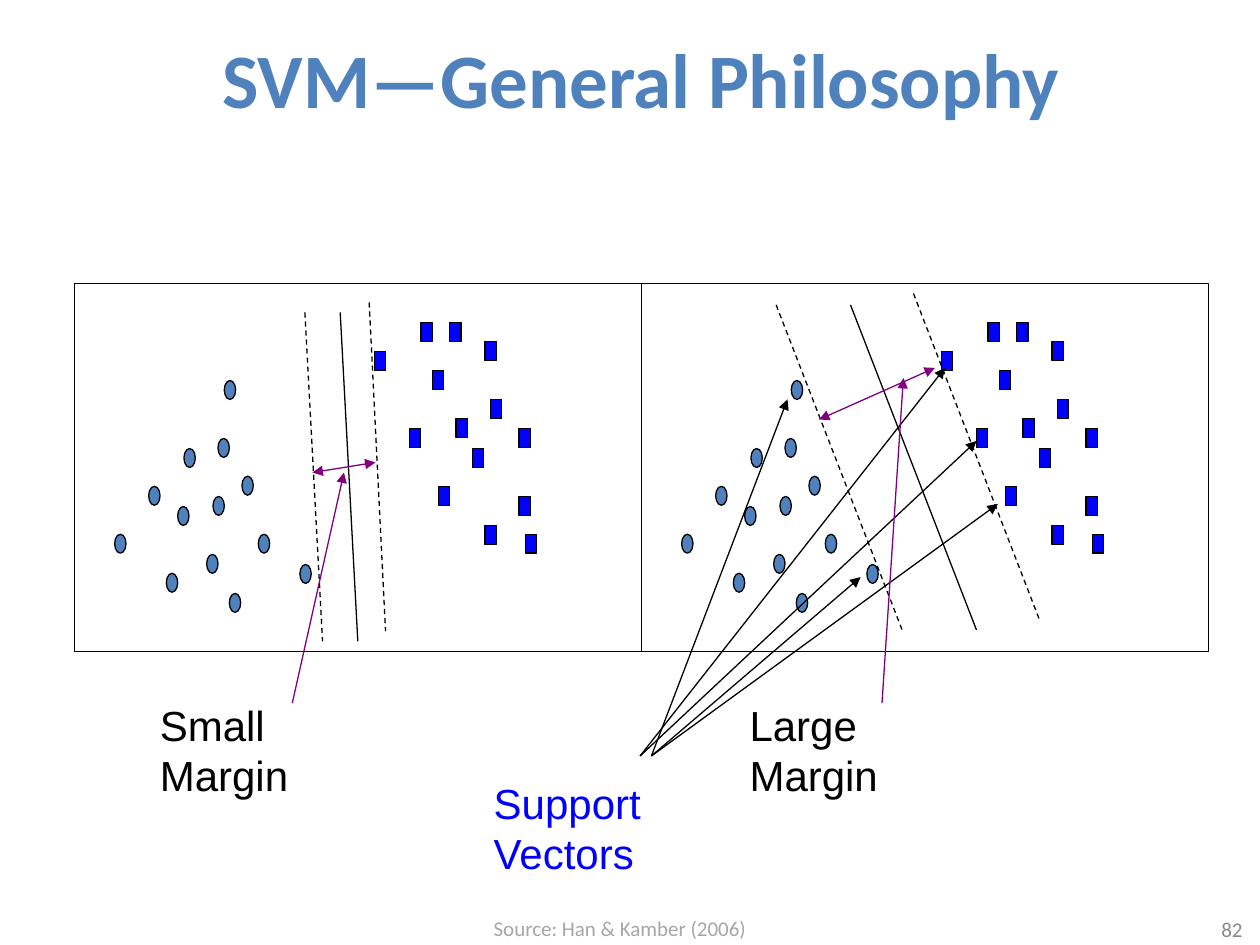
from lxml.etree import SubElement
from pptx import Presentation
from pptx.dml.color import RGBColor
from pptx.enum.dml import MSO_LINE_DASH_STYLE as Dash
from pptx.enum.shapes import MSO_CONNECTOR as Connector, MSO_SHAPE as Shape
from pptx.enum.text import MSO_ANCHOR as Anchor, PP_ALIGN as Align
from pptx.oxml.ns import qn
from pptx.util import Inches, Pt

STEEL = RGBColor(0x4F, 0x81, 0xBD)
BLUE = RGBColor(0x00, 0x00, 0xFF)
BLACK = RGBColor(0x00, 0x00, 0x00)
PURPLE = RGBColor(0x80, 0x00, 0x80)
GRAY = RGBColor(0x89, 0x89, 0x89)
LIGHT_GRAY = RGBColor(0xA6, 0xA6, 0xA6)

PANEL_LEFT, PANEL_TOP, PANEL_WIDTH, PANEL_HEIGHT = 0.59, 2.25, 4.5, 2.92
MARK_WIDTH, MARK_HEIGHT = 0.09, 0.15

CIRCLES = [
    (1.32, 4.55), (1.41, 4.02), (0.91, 4.24), (1.18, 3.86), (1.64, 4.4),
    (1.46, 3.56), (1.69, 3.94), (1.73, 3.48), (1.92, 3.78), (2.05, 4.24),
    (1.82, 4.71), (2.38, 4.48), (1.78, 3.02),
]
SQUARES = [
    (3.25, 3.4), (2.97, 2.79), (3.34, 2.56), (3.48, 3.86), (3.43, 2.94),
    (3.62, 3.32), (3.57, 2.56), (3.85, 2.71), (3.75, 3.56), (3.89, 3.17),
    (3.85, 4.17), (4.12, 3.4), (4.12, 3.94), (4.17, 4.24),
]
SMALL_MARGIN_LINES = [
    ((2.93, 2.4), (3.06, 5.01), True),
    ((2.42, 2.48), (2.56, 5.09), True),
    ((2.7, 2.48), (2.84, 5.09), False),
]
LARGE_MARGIN_LINES = [
    ((6.16, 2.42), (7.16, 5), True),
    ((7.25, 2.33), (8.25, 4.92), True),
    ((6.75, 2.42), (7.75, 5), False),
]
SUPPORT_ARROWS = [
    ((5.08, 6), (7.5, 2.92)),
    ((5.08, 6), (7.75, 3.5)),
    ((5.17, 6), (7.92, 4)),
    ((5.17, 6), (6.83, 4.58)),
    ((5.17, 6), (6.25, 3.17)),
]


def add_text(shapes, text, area, size, color, font="Arial",
             align=Align.LEFT, anchor=Anchor.TOP, bold=False):
    box = shapes.add_textbox(*map(Inches, area))
    frame = box.text_frame
    frame.word_wrap = True
    frame.vertical_anchor = anchor
    frame.text = text
    para = frame.paragraphs[0]
    para.alignment = align
    span = para.runs[0].font
    span.name, span.size, span.bold = font, Pt(size), bold
    span.color.rgb = color


def add_outlined(shapes, kind, area, fill=None):
    shape = shapes.add_shape(kind, *map(Inches, area))
    shape.shadow.inherit = False
    if fill is None:
        shape.fill.background()
    else:
        shape.fill.solid()
        shape.fill.fore_color.rgb = fill
    shape.line.color.rgb = BLACK
    shape.line.width = Pt(0.75)


def add_line(shapes, start, end, color=BLACK, dashed=False, arrows=()):
    line = shapes.add_connector(Connector.STRAIGHT, *map(Inches, start + end))
    line.line.color.rgb = color
    line.line.width = Pt(0.75)
    if dashed:
        line.line.dash_style = Dash.DASH
    for name in arrows:
        SubElement(line.line._get_or_add_ln(), qn(f"a:{name}"), type="triangle")
    SubElement(line._element.spPr, qn("a:effectLst"))


def add_panel(page, offset, boundaries):
    shapes = page.shapes.add_group_shape().shapes
    for kind, color, points in ((Shape.OVAL, STEEL, CIRCLES),
                                (Shape.RECTANGLE, BLUE, SQUARES)):
        for left, top in points:
            area = (left + offset, top, MARK_WIDTH, MARK_HEIGHT)
            add_outlined(shapes, kind, area, color)
    add_outlined(shapes, Shape.RECTANGLE,
                 (PANEL_LEFT + offset, PANEL_TOP, PANEL_WIDTH, PANEL_HEIGHT))
    for start, end, dashed in boundaries:
        add_line(shapes, start, end, dashed=dashed)


def add_support_vectors(page):
    shapes = page.shapes.add_group_shape().shapes
    add_text(shapes, "Support Vectors", (3.82, 6.12, 2.55, 0.5), 24, BLUE)
    for start, end in SUPPORT_ARROWS:
        add_line(shapes, start, end, arrows=("tailEnd",))


def add_margin(page, text, area, span, pointer):
    shapes = page.shapes.add_group_shape().shapes
    add_text(shapes, text, area, 24, BLACK)
    add_line(shapes, *span, color=PURPLE, arrows=("headEnd", "tailEnd"))
    add_line(shapes, *pointer, color=PURPLE, arrows=("tailEnd",))


def main():
    deck = Presentation()
    deck.slide_width, deck.slide_height = Inches(10), Inches(7.5)
    page = deck.slides.add_slide(deck.slide_layouts[6])

    add_text(page.shapes, "SVM—General Philosophy", (0.38, 0.28, 9.42, 0.67), 44,
             STEEL, "Calibri", Align.CENTER, Anchor.MIDDLE, bold=True)
    add_panel(page, 0, SMALL_MARGIN_LINES)
    add_panel(page, PANEL_WIDTH, LARGE_MARGIN_LINES)
    add_support_vectors(page)
    add_margin(page, "Small Margin", (1.17, 5.5, 2.1, 0.5),
               ((2.48, 3.75), (2.98, 3.67)), ((2.32, 5.58), (2.73, 3.75)))
    add_margin(page, "Large Margin", (5.85, 5.5, 2.12, 0.5),
               ((6.5, 3.33), (7.42, 2.92)), ((7, 5.58), (7.17, 3)))
    add_text(page.shapes, "82", (9.25, 7.22, 0.71, 0.31), 12,
             GRAY, "Calibri", Align.RIGHT, Anchor.MIDDLE)
    add_text(page.shapes, "Source: Han & Kamber (2006)", (3.66, 7.22, 2.52, 0.3), 12,
             LIGHT_GRAY, "Calibri", Align.CENTER)

    deck.save("out.pptx")


if __name__ == "__main__":
    main()
